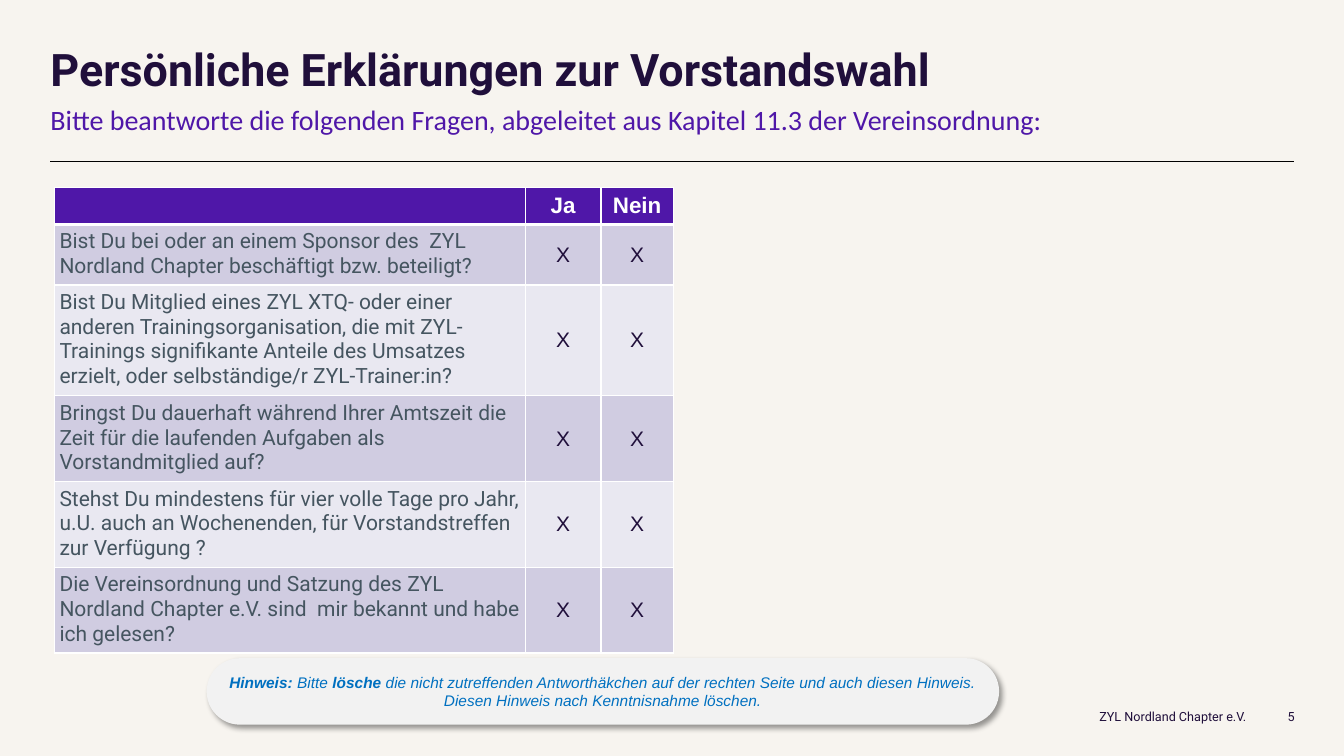
from lxml import etree
from pptx import Presentation
from pptx.dml.color import RGBColor
from pptx.enum.shapes import MSO_CONNECTOR, MSO_SHAPE
from pptx.enum.text import MSO_ANCHOR, PP_ALIGN
from pptx.oxml.ns import qn
from pptx.util import Inches, Pt

STRAIGHT = MSO_CONNECTOR.STRAIGHT
ROUNDED = MSO_SHAPE.ROUNDED_RECTANGLE
TOP, MIDDLE = MSO_ANCHOR.TOP, MSO_ANCHOR.MIDDLE
LEFT, CENTER, RIGHT = PP_ALIGN.LEFT, PP_ALIGN.CENTER, PP_ALIGN.RIGHT

COLORS = {
    "background": "F7F4EF", "dark": "200F3B", "purple": "4F17A8",
    "question": "455560", "band": "D0CCE1", "light_band": "E9E8F1",
    "white": "FFFFFF", "black": "000000", "hint": "F2F2F2", "hint_text": "0070C0",
}
QUESTIONS = [
    "Bist Du bei oder an einem Sponsor des  ZYL Nordland Chapter beschäftigt bzw. beteiligt?",
    "Bist Du Mitglied eines ZYL XTQ- oder einer anderen Trainingsorganisation, die mit "
    "ZYL-Trainings signifikante Anteile des Umsatzes erzielt, oder selbständige/r ZYL-Trainer:in?",
    "Bringst Du dauerhaft während Ihrer Amtszeit die Zeit für die laufenden Aufgaben als "
    "Vorstandmitglied auf?",
    "Stehst Du mindestens für vier volle Tage pro Jahr, u.U. auch an Wochenenden, für "
    "Vorstandstreffen zur Verfügung ?",
    "Die Vereinsordnung und Satzung des ZYL Nordland Chapter e.V. sind  mir bekannt und habe "
    "ich gelesen?",
]
COLUMN_WIDTHS = [4.67, 0.75, 0.72]
ROW_HEIGHTS = [0.36, 0.58, 1.08, 0.83, 0.83, 0.83]
HINT = [
    [("Hinweis: ", True), ("Bitte ", False), ("lösche ", True),
     ("die nicht zutreffenden Antworthäkchen auf der rechten Seite und auch diesen Hinweis.", False)],
    [("Diesen Hinweis nach Kenntnisnahme löschen.", False)],
]


def rgb(name):
    """Return the named colour."""
    return RGBColor.from_string(COLORS[name])


def style_paragraph(paragraph, font_name, size, color, bold=False, align=LEFT):
    """Set alignment and font of a paragraph."""
    paragraph.alignment = align
    font = paragraph.font
    font.name, font.size, font.bold = font_name, Pt(size), bold
    font.color.rgb = rgb(color)


def add_text(slide, box, text, font_name, size, color, bold=False, align=LEFT,
             anchor=TOP, line_spacing=1.0):
    """Add a text box without margins."""
    frame = slide.shapes.add_textbox(*map(Inches, box)).text_frame
    frame.word_wrap = True
    frame.vertical_anchor = anchor
    frame.margin_left = frame.margin_right = frame.margin_top = frame.margin_bottom = 0
    paragraph = frame.paragraphs[0]
    paragraph.text = text
    paragraph.line_spacing = line_spacing
    style_paragraph(paragraph, font_name, size, color, bold, align)


def add_rule(slide, left, right, top):
    """Add the thin line below the heading."""
    line = slide.shapes.add_connector(
        STRAIGHT, Inches(left), Inches(top), Inches(right), Inches(top))
    line.line.color.rgb = rgb("black")
    line.line.width = Pt(0.5)
    etree.SubElement(line._element.spPr, qn("a:effectLst"))


def set_borders(cell, top, bottom):
    """Draw white borders around a cell, with top and bottom widths in points."""
    properties = cell._tc.get_or_add_tcPr()
    for tag, width in (("a:lnL", 1), ("a:lnR", 1), ("a:lnT", top), ("a:lnB", bottom)):
        border = etree.SubElement(properties, qn(tag), w=str(Pt(width)))
        fill = etree.SubElement(border, qn("a:solidFill"))
        etree.SubElement(fill, qn("a:srgbClr"), val=COLORS["white"])


def fill_cell(cell, text, row, column):
    """Write and style one table cell."""
    set_borders(cell, 3 if row == 1 else 1, 3 if row == 0 else 1)
    cell.fill.solid()
    band = "purple" if row == 0 else "band" if row % 2 else "light_band"
    cell.fill.fore_color.rgb = rgb(band)
    cell.margin_left = cell.margin_right = Inches(0.05)
    cell.margin_top = cell.margin_bottom = Inches(0.05)
    cell.vertical_anchor = MIDDLE if row == 0 or column else TOP
    paragraph = cell.text_frame.paragraphs[0]
    paragraph.text = text
    if row == 0:
        style_paragraph(paragraph, "Arial", 16, "white", True, CENTER)
    elif column:
        style_paragraph(paragraph, "Arial", 15, "dark", False, CENTER)
    else:
        style_paragraph(paragraph, "Roboto", 15, "question")


def add_question_table(slide, left, top):
    """Add the table of questions and answers."""
    rows = [["", "Ja", "Nein"]] + [[question, "X", "X"] for question in QUESTIONS]
    table = slide.shapes.add_table(
        len(rows), len(COLUMN_WIDTHS), Inches(left), Inches(top),
        Inches(sum(COLUMN_WIDTHS)), Inches(sum(ROW_HEIGHTS))).table
    for column, width in zip(table.columns, COLUMN_WIDTHS):
        column.width = Inches(width)
    for table_row, height in zip(table.rows, ROW_HEIGHTS):
        table_row.height = Inches(height)
    for row, texts in enumerate(rows):
        for column, text in enumerate(texts):
            fill_cell(table.cell(row, column), text, row, column)


def add_shadow(shape):
    """Give a shape a soft shadow to the lower right."""
    shape.shadow.inherit = False
    effects = shape._element.spPr.find(qn("a:effectLst"))
    shadow = etree.SubElement(
        effects, qn("a:outerShdw"), blurRad=str(Pt(4)), dist=str(Pt(3)),
        dir=str(45 * 60000), algn="tl", rotWithShape="0")
    color = etree.SubElement(shadow, qn("a:srgbClr"), val=COLORS["black"])
    etree.SubElement(color, qn("a:alpha"), val="40000")


def add_hint(slide, box):
    """Add the rounded hint with mixed bold text."""
    shape = slide.shapes.add_shape(ROUNDED, *map(Inches, box))
    shape.adjustments[0] = 0.5
    shape.fill.solid()
    shape.fill.fore_color.rgb = rgb("hint")
    shape.line.fill.background()
    add_shadow(shape)
    frame = shape.text_frame
    frame.word_wrap = True
    frame.vertical_anchor = MIDDLE
    for index, parts in enumerate(HINT):
        paragraph = frame.add_paragraph() if index else frame.paragraphs[0]
        style_paragraph(paragraph, "Arial", 11, "hint_text", align=CENTER)
        paragraph.font.italic = True
        for text, bold in parts:
            run = paragraph.add_run()
            run.text = text
            run.font.bold = bold


def main():
    """Build the slide and save it."""
    presentation = Presentation()
    presentation.slide_width, presentation.slide_height = Inches(13.33), Inches(7.5)
    slide = presentation.slides.add_slide(presentation.slide_layouts[6])
    slide.background.fill.solid()
    slide.background.fill.fore_color.rgb = rgb("background")
    add_text(slide, (12.36, 6.71, 0.48, 0.79), "5", "Roboto", 9, "dark",
             align=RIGHT, anchor=MIDDLE)
    add_text(slide, (9.38, 6.71, 2.98, 0.79), "ZYL Nordland Chapter e.V.", "Roboto", 9, "dark",
             align=RIGHT, anchor=MIDDLE)
    add_rule(slide, 0.5, 12.83, 1.6)
    add_text(slide, (0.5, 0.47, 12.33, 0.48), "Persönliche Erklärungen zur Vorstandswahl",
             "Roboto", 32, "dark", bold=True, line_spacing=0.9)
    add_text(slide, (0.5, 1.02, 12.33, 0.34),
             "Bitte beantworte die folgenden Fragen, abgeleitet aus Kapitel 11.3 der Vereinsordnung:",
             "Calibri", 20, "purple")
    add_question_table(slide, 0.54, 1.86)
    add_hint(slide, (2.05, 6.53, 7.86, 0.66))
    presentation.save("out.pptx")


if __name__ == "__main__":
    main()
